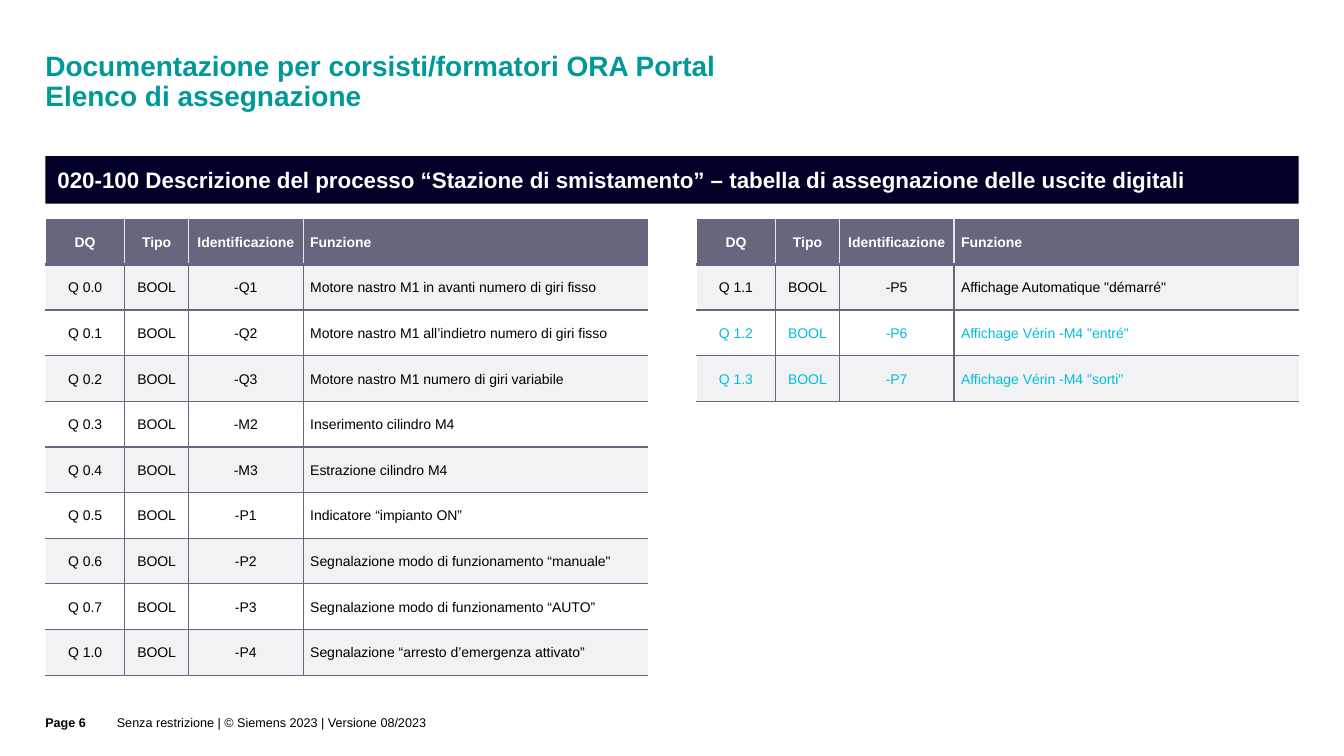
from lxml import etree
from pptx import Presentation, util as u
from pptx.dml.color import RGBColor
from pptx.enum import shapes, text
from pptx.oxml.ns import qn

# Content
TITLE = "Documentazione per corsisti/formatori ORA Portal\vElenco di assegnazione"
BANNER = ("020-100 Descrizione del processo “Stazione di smistamento” – "
          "tabella di assegnazione delle uscite digitali")
PAGE = "Page 6"
FOOTER = "Senza restrizione | © Siemens 2023 | Versione 08/2023"
HEADER = ("DQ", "Tipo", "Identificazione", "Funzione")
TYPE = "BOOL"
LEFT_OUTPUTS = [
    ("Q 0.0", "-Q1", "Motore nastro M1 in avanti numero di giri fisso"),
    ("Q 0.1", "-Q2", "Motore nastro M1 all’indietro numero di giri fisso"),
    ("Q 0.2", "-Q3", "Motore nastro M1 numero di giri variabile"),
    ("Q 0.3", "-M2", "Inserimento cilindro M4"),
    ("Q 0.4", "-M3", "Estrazione cilindro M4"),
    ("Q 0.5", "-P1", "Indicatore “impianto ON”"),
    ("Q 0.6", "-P2", "Segnalazione modo di funzionamento “manuale\""),
    ("Q 0.7", "-P3", "Segnalazione modo di funzionamento “AUTO”"),
    ("Q 1.0", "-P4", "Segnalazione “arresto d’emergenza attivato”"),
]
RIGHT_OUTPUTS = [
    ("Q 1.1", "-P5", "Affichage Automatique \"démarré\""),
    ("Q 1.2", "-P6", "Affichage Vérin -M4 \"entré\""),
    ("Q 1.3", "-P7", "Affichage Vérin -M4 \"sorti\""),
]
HIGHLIGHTED = {"Q 1.2", "Q 1.3"}

# Colours
TEAL, NAVY, SLATE, CYAN = "009999", "000028", "66667E", "00BEDC"
BAND, DIVIDER, WHITE, BLACK = "F2F2F4", "E5E5E9", "FFFFFF", "000000"

# Grid, in inches
WIDTH, HEIGHT = 13.34, 7.5
MARGIN = 0.45
CONTENT = WIDTH - 2 * MARGIN
GUTTER = 0.48
TABLE_WIDTH = (CONTENT - GUTTER) / 2
TABLE_TOP = 2.17
ROW = 4.53 / 10
COLUMNS = (0.79, 0.63, 1.14)
FOOTER_TOP, FOOTER_HEIGHT, PAGE_WIDTH = 6.9, 0.6, 0.71


def color(value):
    return RGBColor.from_string(value)


def style(paragraph, size, value, bold=False, spacing=None):
    font = paragraph.font
    font.name, font.size, font.bold = "Arial", u.Pt(size), bold
    font.color.rgb = color(value)
    if spacing:
        paragraph.line_spacing = spacing


def set_margins(target, left, top, right, bottom):
    target.margin_left, target.margin_top = u.Inches(left), u.Inches(top)
    target.margin_right, target.margin_bottom = u.Inches(right), u.Inches(bottom)


def write(shape, words, margins, anchor, size, value, bold=False, spacing=None):
    frame = shape.text_frame
    frame.word_wrap = True
    frame.vertical_anchor = anchor
    set_margins(frame, *margins)
    frame.text = words
    paragraph = frame.paragraphs[0]
    paragraph.alignment = text.PP_ALIGN.LEFT
    style(paragraph, size, value, bold, spacing)


def add_text(slide, box, *args, **kwargs):
    write(slide.shapes.add_textbox(*map(u.Inches, box)), *args, **kwargs)


def add_border(cell, side, value, width):
    line = etree.SubElement(cell._tc.get_or_add_tcPr(), qn("a:ln" + side), w=str(u.Pt(width)))
    if value is None:
        etree.SubElement(line, qn("a:noFill"))
    else:
        fill = etree.SubElement(line, qn("a:solidFill"))
        etree.SubElement(fill, qn("a:srgbClr"), val=value)


def format_cell(cell, row, column, highlighted):
    header, last = row == 0, column == len(HEADER) - 1
    inner = DIVIDER if header else SLATE
    borders = {
        "L": (inner if column else WHITE, 1),
        "R": (None if last else inner, 1),
        "T": (WHITE if header else SLATE, 2.25 if row == 1 else 1),
        "B": (SLATE, 2.25 if header else 1),
    }
    for side, (value, width) in borders.items():
        add_border(cell, side, value, width)
    if header or row % 2:
        cell.fill.solid()
        cell.fill.fore_color.rgb = color(SLATE if header else BAND)
    else:
        cell.fill.background()
    cell.vertical_anchor = text.MSO_ANCHOR.MIDDLE
    set_margins(cell, 0.07, 0, 0.07, 0)
    paragraph = cell.text_frame.paragraphs[0]
    paragraph.alignment = text.PP_ALIGN.LEFT if last else text.PP_ALIGN.CENTER
    style(paragraph, 10, WHITE if header else CYAN if highlighted else BLACK, header, 1.1)


def add_outputs(slide, left, outputs):
    rows = [HEADER] + [(address, TYPE, tag, use) for address, tag, use in outputs]
    box = (left, TABLE_TOP, TABLE_WIDTH, ROW * len(rows))
    table = slide.shapes.add_table(len(rows), len(HEADER), *map(u.Inches, box)).table
    table.horz_banding = False
    for column, width in zip(table.columns, COLUMNS + (TABLE_WIDTH - sum(COLUMNS),)):
        column.width = u.Inches(width)
    for i, values in enumerate(rows):
        table.rows[i].height = u.Inches(ROW)
        for j, value in enumerate(values):
            cell = table.cell(i, j)
            cell.text = value
            format_cell(cell, i, j, values[0] in HIGHLIGHTED)


def main():
    presentation = Presentation()
    presentation.slide_width, presentation.slide_height = u.Inches(WIDTH), u.Inches(HEIGHT)
    slide = presentation.slides.add_slide(presentation.slide_layouts[6])
    middle = text.MSO_ANCHOR.MIDDLE

    # Title
    add_text(slide, (MARGIN, 0.52, 10.79, 0.63), TITLE, (0, 0, 0.35, 0.02),
             text.MSO_ANCHOR.TOP, 20, TEAL, bold=True, spacing=0.9)

    # Footer
    footer_margins = (0, 0, 0, 0.07)
    add_text(slide, (MARGIN + PAGE_WIDTH, FOOTER_TOP, 10.08, FOOTER_HEIGHT), FOOTER,
             footer_margins, middle, 9, BLACK)
    add_text(slide, (MARGIN, FOOTER_TOP, PAGE_WIDTH, FOOTER_HEIGHT), PAGE,
             footer_margins, middle, 9, BLACK, bold=True)

    # Banner
    banner = slide.shapes.add_shape(shapes.MSO_SHAPE.RECTANGLE,
                                    *map(u.Inches, (MARGIN, 1.55, CONTENT, 0.47)))
    banner.shadow.inherit = False
    banner.fill.solid()
    banner.fill.fore_color.rgb = color(NAVY)
    banner.line.fill.background()
    write(banner, BANNER, (0.12, 0, 0.08, 0), middle, 16, WHITE, bold=True)

    # Assignment tables
    for index, outputs in enumerate((LEFT_OUTPUTS, RIGHT_OUTPUTS)):
        add_outputs(slide, MARGIN + index * (TABLE_WIDTH + GUTTER), outputs)

    presentation.save("out.pptx")


if __name__ == "__main__":
    main()
